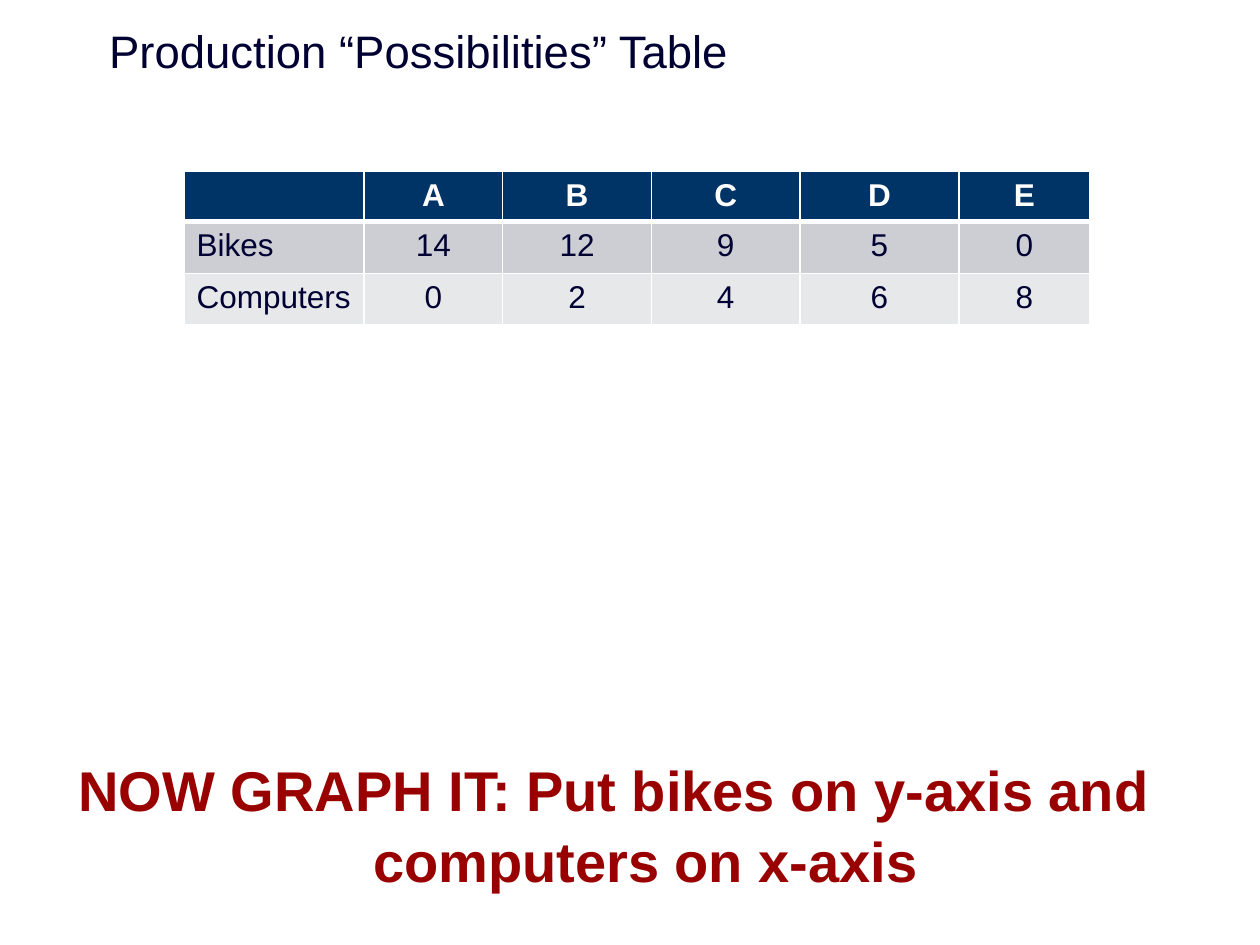
import pptx
import pptx.util
import pptx.dml.color
import pptx.enum.text
import pptx.oxml
import pptx.oxml.ns
from pptx.util import Inches

COLORS = {
    "ink": "000032",
    "white": "FFFFFF",
    "header": "003366",
    "bikes": "CCCED3",
    "computers": "E7E8EA",
    "prompt": "990000",
}
CENTER = pptx.enum.text.PP_ALIGN.CENTER
LEFT = pptx.enum.text.PP_ALIGN.LEFT


def format_paragraph(paragraph, size, color, bold=False, align=CENTER):
    paragraph.alignment = align
    paragraph.font.name = "Arial"
    paragraph.font.size = pptx.util.Pt(size)
    paragraph.font.bold = bold
    paragraph.font.color.rgb = pptx.dml.color.RGBColor.from_string(COLORS[color])


def set_borders(cell, bottom_width):
    properties = cell._tc.get_or_add_tcPr()
    widths = {"lnL": 1, "lnR": 1, "lnT": 1, "lnB": bottom_width}
    for position, (edge, width) in enumerate(widths.items()):
        line = pptx.oxml.parse_xml(
            f'<a:{edge} {pptx.oxml.ns.nsdecls("a")} w="{pptx.util.Pt(width)}">'
            f'<a:solidFill><a:srgbClr val="{COLORS["white"]}"/></a:solidFill></a:{edge}>'
        )
        properties.insert(position, line)


presentation = pptx.Presentation()
presentation.slide_width = Inches(10)
presentation.slide_height = Inches(7.5)
slide = presentation.slides.add_slide(presentation.slide_layouts[1])

# Title
title = slide.shapes.title
title.left, title.top = Inches(-1.46), Inches(-0.1)
title.width, title.height = Inches(9.67), Inches(1)
title.text_frame.text = "Production “Possibilities” Table "
title.text_frame.vertical_anchor = pptx.enum.text.MSO_ANCHOR.MIDDLE
format_paragraph(title.text_frame.paragraphs[0], 26, "ink")

# Graphing instruction
prompt = slide.placeholders[1]
prompt.left, prompt.top = Inches(0.5), Inches(5.92)
prompt.width, prompt.height = Inches(8.75), Inches(1.17)
prompt.text_frame.text = "NOW GRAPH IT: Put bikes on y-axis and computers on x-axis"
prompt.text_frame.auto_size = pptx.enum.text.MSO_AUTO_SIZE.SHAPE_TO_FIT_TEXT
paragraph = prompt.text_frame.paragraphs[0]
paragraph.space_before = pptx.util.Pt(0)
paragraph.line_spacing = 1.05
paragraph_properties = paragraph._p.get_or_add_pPr()
paragraph_properties.set("marL", str(Inches(0.5)))
paragraph_properties.set("indent", str(Inches(-0.5)))
paragraph_properties.append(
    pptx.oxml.parse_xml(f'<a:buNone {pptx.oxml.ns.nsdecls("a")}/>')
)
format_paragraph(paragraph, 32, "prompt", bold=True)

# Production possibilities table
rows = [
    ("header", 0.39, ["", "A", "B", "C", "D", "E"]),
    ("bikes", 0.41, ["Bikes", "14", "12", "9", "5", "0"]),
    ("computers", 0.41, ["Computers", "0", "2", "4", "6", "8"]),
]
column_widths = [1.43, 1.1, 1.18, 1.18, 1.26, 1.04]
table = slide.shapes.add_table(
    len(rows), len(column_widths),
    Inches(1.46), Inches(1.36), Inches(7.19), Inches(1.21),
).table
for column, width in zip(table.columns, column_widths):
    column.width = Inches(width)
for row_index, (fill, height, values) in enumerate(rows):
    table.rows[row_index].height = Inches(height)
    is_header = row_index == 0
    for column_index, value in enumerate(values):
        cell = table.cell(row_index, column_index)
        cell.text = value
        cell.fill.solid()
        cell.fill.fore_color.rgb = pptx.dml.color.RGBColor.from_string(COLORS[fill])
        set_borders(cell, 3 if is_header else 1)
        format_paragraph(
            cell.text_frame.paragraphs[0], 18,
            "white" if is_header else "ink",
            bold=is_header,
            align=CENTER if column_index else LEFT,
        )

presentation.save("out.pptx")
